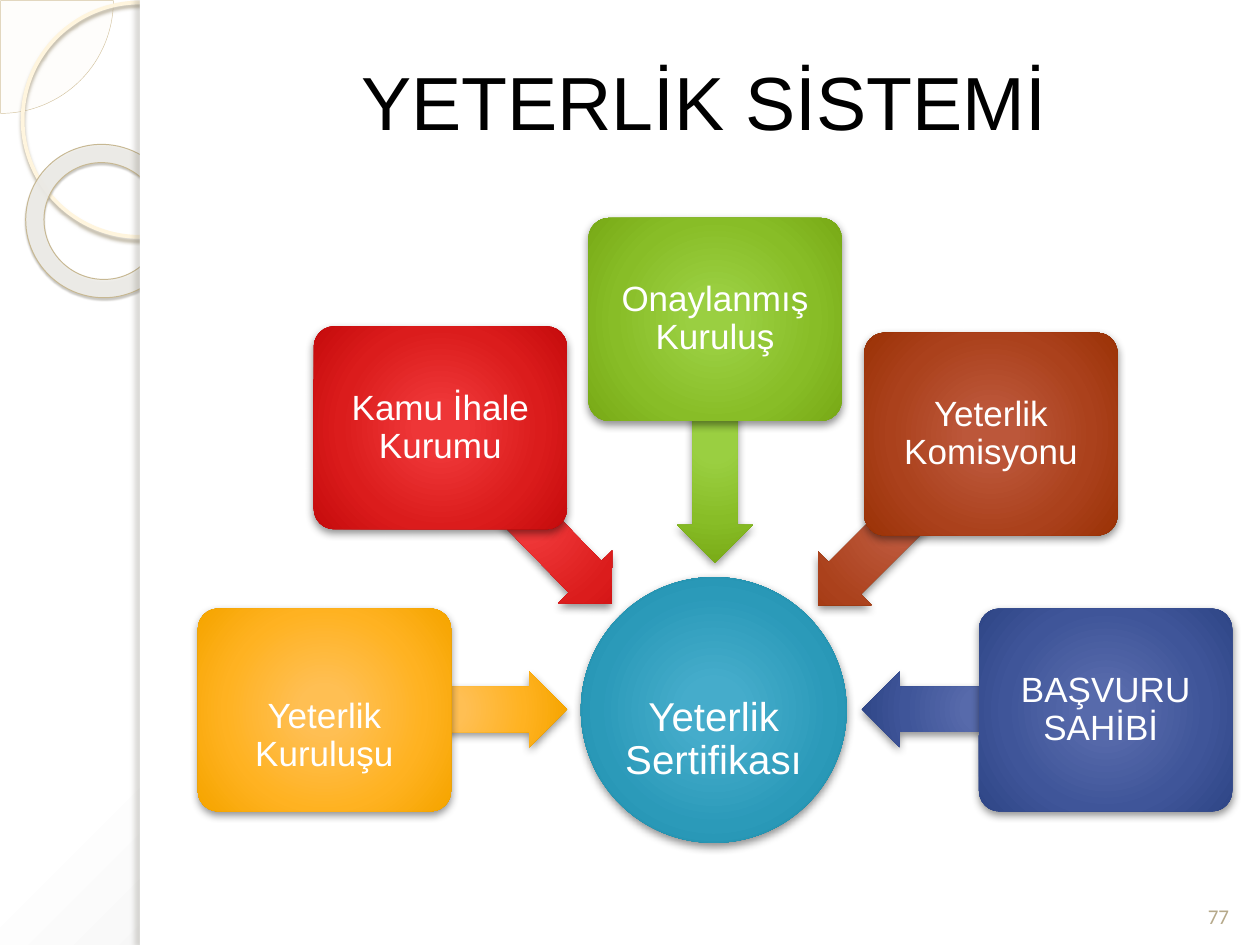
from pptx import Presentation
from pptx.dml.color import RGBColor
from pptx.enum.shapes import MSO_SHAPE
from pptx.enum.text import MSO_ANCHOR, PP_ALIGN
from pptx.oxml.ns import qn
from pptx.util import Inches, Pt
from lxml.etree import SubElement

FONT = "Arial"
CENTRE = (50, 50, 50, 50)
STOPS = (0, 15, 62, 97, 100)
SOFT_SHADOW = ("000000", 43, 5, 2, 90)


def rgb(value):
    return RGBColor.from_string(value)


def add_srgb(parent, value, alpha=100):
    color = SubElement(parent, qn("a:srgbClr"), val=value)
    if alpha < 100:
        SubElement(color, qn("a:alpha"), val=str(alpha * 1000))


def radial_gradient(fill, holder, stops, focus):
    """Turn a fill into a circular gradient; focus is left, top, right, bottom in percent."""
    fill.gradient()
    gradient = next(holder.iter(qn("a:gradFill")))
    for child in list(gradient):
        gradient.remove(child)
    gradient.set("rotWithShape", "1")
    stop_list = SubElement(gradient, qn("a:gsLst"))
    for position, value in stops:
        stop = SubElement(stop_list, qn("a:gs"), pos=str(position * 1000))
        add_srgb(stop, value)
    path_fill = SubElement(gradient, qn("a:path"))
    path_fill.set("path", "circle")
    edges = {side: str(v * 1000) for side, v in zip("ltrb", focus)}
    SubElement(path_fill, qn("a:fillToRect"), **edges)


class SlideBuilder:
    """Holds the slide and the style of its elements."""

    def __init__(self, slide):
        self.slide = slide

    def background(self, stops, focus):
        background = self.slide.background
        fill = background.fill
        radial_gradient(fill, self.slide._element, stops, focus)

    def shape(self, kind, box, fill=None, alpha=100, line=None, shadow=None,
              adjustments=(), rotation=0):
        """Add a preset shape; a fill is a hex colour or a tuple of gradient colours."""
        shape = self.slide.shapes.add_shape(kind, *map(Inches, box))
        shape.rotation = rotation
        for i, value in enumerate(adjustments):
            shape.adjustments[i] = value
        if fill is None:
            shape.fill.background()
        elif isinstance(fill, str):
            shape.fill.solid()
            shape.fill.fore_color.rgb = rgb(fill)
            if alpha < 100:
                color = shape._element.spPr.find(qn("a:solidFill"))[0]
                SubElement(color, qn("a:alpha"), val=str(alpha * 1000))
        else:
            radial_gradient(shape.fill, shape._element.spPr, zip(STOPS, fill), CENTRE)
        if line:
            shape.line.color.rgb = rgb(line[0])
            shape.line.width = Pt(line[1])
        else:
            shape.line.fill.background()
        shape.shadow.inherit = False
        if shadow:
            self.shadow(shape, *shadow)
        return shape

    def shadow(self, shape, color, alpha, blur, distance, angle):
        effects = shape._element.spPr.find(qn("a:effectLst"))
        outer = SubElement(effects, qn("a:outerShdw"), blurRad=str(Pt(blur)),
                           dist=str(Pt(distance)), dir=str(angle * 60000),
                           algn="ctr", rotWithShape="0")
        add_srgb(outer, color, alpha)

    def text(self, shape, words, size, color="FFFFFF", font=FONT, inset=0.04,
             lowered=0, raised=0, anchor=MSO_ANCHOR.MIDDLE, spacing=0.9):
        """Write centred text; lowered and raised add to the top and bottom inset."""
        frame = shape.text_frame
        frame.word_wrap = True
        frame.vertical_anchor = anchor
        frame.margin_left = frame.margin_right = Inches(inset)
        frame.margin_top = Inches(inset + lowered)
        frame.margin_bottom = Inches(inset + raised)
        paragraph = frame.paragraphs[0]
        paragraph.alignment = PP_ALIGN.CENTER
        paragraph.line_spacing = spacing
        run = paragraph.add_run()
        run.text = words
        run.font.size = Pt(size)
        run.font.name = font
        run.font.color.rgb = rgb(color)

    def title(self, words, box):
        title = self.slide.shapes.title
        title.left, title.top, title.width, title.height = map(Inches, box)
        self.text(title, words, 43, color="000000", inset=0.05, raised=0.26, spacing=1)
        # Bring the title in front of the white panel
        self.slide.shapes._spTree.append(title._element)

    def page_number(self, number, box):
        label = self.slide.shapes.add_textbox(*map(Inches, box))
        self.text(label, number, 12, color="B6A98A", font="Calibri", inset=0.05,
                  anchor=MSO_ANCHOR.BOTTOM, spacing=1)

    def actor(self, words, corner, arrow, rotation, colors, lowered=0):
        """Add a rounded box with the arrow that leads from it to the certificate."""
        self.shape(MSO_SHAPE.LEFT_ARROW, (*arrow, 0.6), colors, shadow=SOFT_SHADOW,
                   adjustments=(0.6, 0.5), rotation=rotation)
        box = self.shape(MSO_SHAPE.ROUNDED_RECTANGLE, (*corner, 2.01, 1.61), colors,
                         shadow=SOFT_SHADOW, adjustments=(0.1,))
        self.text(box, words, 20, lowered=lowered)


def main():
    deck = Presentation()
    deck.slide_width, deck.slide_height = Inches(10), Inches(7.5)
    builder = SlideBuilder(deck.slides.add_slide(deck.slide_layouts[5]))

    builder.background([(0, "FFFFFF"), (40, "FFFFFF"), (100, "C5C5C5")],
                       (-24, -20, 124, 120))
    builder.shape(MSO_SHAPE.PIE, (-0.89, -0.89, 1.79, 1.79), "FEFAF4", alpha=33,
                  line=("D3C39F", 0.25), adjustments=(0, 54.02))
    builder.shape(MSO_SHAPE.OVAL, (0.18, 0.02, 1.86, 1.86), line=("FFF5DE", 2.15),
                  shadow=("B0A68F", 85, 2, 2, 90))
    builder.shape(MSO_SHAPE.DONUT, (0.2, 1.15, 1.23, 1.21), "EFEEEA", alpha=90,
                  line=("C7B893", 0.58), shadow=("5A5444", 35, 1, 1.2, 75),
                  adjustments=(0.12,), rotation=38.6)
    builder.shape(MSO_SHAPE.RECTANGLE, (1.11, 0, 8.89, 7.5), "FFFFFF")
    builder.shape(MSO_SHAPE.RECTANGLE, (1.11, 0, 0.08, 7.5), "FFFFFF",
                  shadow=("736F63", 25, 3, 3, 180))
    builder.title("YETERLİK SİSTEMİ ", (1.57, 0.3, 8.2, 1.25))

    certificate = builder.shape(
        MSO_SHAPE.OVAL, (4.61, 4.58, 2.11, 2.11),
        ("45ACCC", "45ACCB", "2B9AB9", "1C8AA7", "0E89A7"), shadow=SOFT_SHADOW)
    builder.text(certificate, "Yeterlik Sertifikası ", 23, inset=0.02, lowered=0.48)

    actors = [
        ("Yeterlik Kuruluşu", (1.57, 4.83), (2.57, 5.33, 1.93), 180,
         ("FFBF54", "FFBF53", "FFB221", "F6A500", "D69900"), 0.42),
        ("Kamu İhale Kurumu", (2.49, 2.59), (3.19, 3.79, 1.96), 225.8,
         ("EF3737", "EE3637", "DB1C1C", "C70C0D", "C30001"), 0),
        ("Onaylanmış Kuruluş", (4.67, 1.73), (4.71, 3.2, 1.93), 270,
         ("9AD041", "9ACF41", "88BD27", "79AB17", "77AC08"), 0),
        ("Yeterlik Komisyonu", (6.86, 2.64), (6.21, 3.82, 1.93), 315,
         ("BD583A", "BC573A", "AB411C", "9C3308", "7E3600"), 0),
        ("BAŞVURU SAHİBİ ", (7.77, 4.83), (6.84, 5.33, 1.93), 0,
         ("576BAC", "576AAB", "3F5599", "304788", "264086"), 0),
    ]
    for actor in actors:
        builder.actor(*actor)

    builder.page_number("77", (9.42, 6.9, 0.5, 0.52))
    deck.save("out.pptx")


if __name__ == "__main__":
    main()
